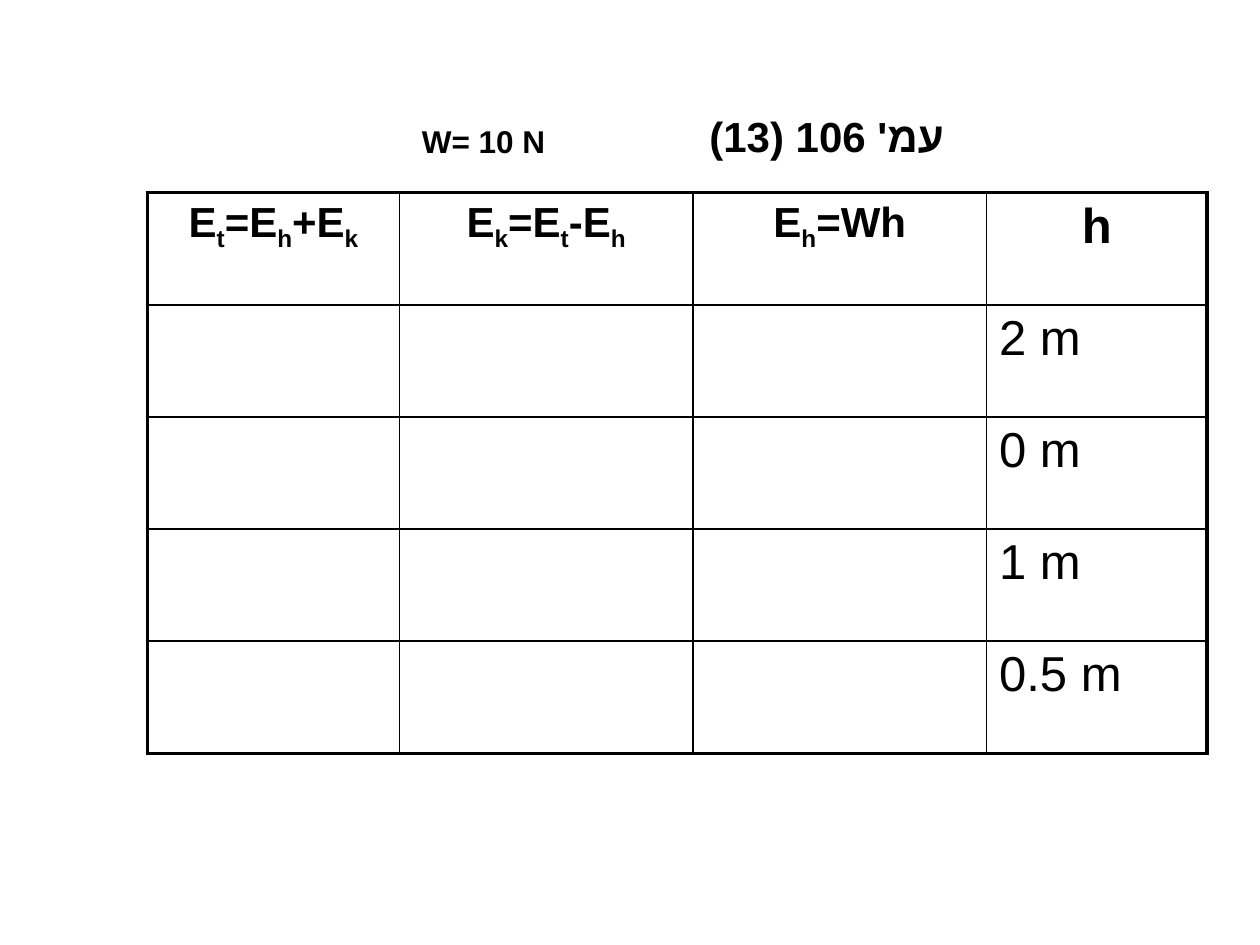
from lxml.etree import SubElement
from pptx import Presentation
from pptx.dml.color import RGBColor
from pptx.enum.text import MSO_AUTO_SIZE, PP_ALIGN
from pptx.oxml.ns import qn
from pptx.util import Inches, Pt

BLACK = RGBColor(0, 0, 0)
FONT = "Arial"
THIN, THICK = 1, 2.25

# Formulas as (text, is_subscript) runs
HEADERS = [
    [("E", False), ("t", True), ("=E", False), ("h", True), ("+E", False), ("k", True)],
    [("E", False), ("k", True), ("=E", False), ("t", True), ("-E", False), ("h", True)],
    [("E", False), ("h", True), ("=Wh", False)],
    [("h", False)],
]
HEADER_SIZES = [24, 24, 24, 28]
HEIGHTS = ["2 m", "0 m", "1 m", "0.5 m"]
COLUMN_WIDTHS = [2, 2.33, 2.33, 1.75]
ROW_HEIGHT = 0.89
TABLE_LEFT, TABLE_TOP = 1.17, 1.53


def add_run(paragraph, text, size, bold=True, subscript=False):
    run = paragraph.add_run()
    run.text = text
    font = run.font
    font.name, font.size, font.bold = FONT, Pt(size), bold
    font.color.rgb = BLACK
    SubElement(font._element, qn("a:cs"), typeface=FONT)
    if subscript:
        font._element.set("baseline", "-25000")


def space_before(paragraph, percent):
    """Set the space before as a percentage of the line."""
    spacing = SubElement(paragraph._p.get_or_add_pPr(), qn("a:spcBef"))
    SubElement(spacing, qn("a:spcPct"), val=str(percent * 1000))


def set_borders(cell, widths):
    """Draw the left, right, top and bottom borders, widths in points."""
    properties = cell._tc.get_or_add_tcPr()
    for tag, width in zip(("a:lnL", "a:lnR", "a:lnT", "a:lnB"), widths):
        line = SubElement(properties, qn(tag), w=str(Pt(width)))
        fill = SubElement(line, qn("a:solidFill"))
        SubElement(fill, qn("a:srgbClr"), val=str(BLACK))


def add_label(slide, text, size, left, top, width, height):
    box = slide.shapes.add_textbox(*map(Inches, (left, top, width, height)))
    frame = box.text_frame
    frame.word_wrap = True
    frame.auto_size = MSO_AUTO_SIZE.SHAPE_TO_FIT_TEXT
    paragraph = frame.paragraphs[0]
    add_run(paragraph, text, size)
    return paragraph


def add_energy_table(slide):
    row_count, column_count = len(HEIGHTS) + 1, len(HEADERS)
    table = slide.shapes.add_table(
        row_count, column_count, Inches(TABLE_LEFT), Inches(TABLE_TOP),
        Inches(sum(COLUMN_WIDTHS)), Inches(ROW_HEIGHT * row_count)).table
    table.first_row = table.horz_banding = False
    for column, width in zip(table.columns, COLUMN_WIDTHS):
        column.width = Inches(width)
    for r, row in enumerate(table.rows):
        row.height = Inches(ROW_HEIGHT)
        for c, cell in enumerate(row.cells):
            on_edge = (c == 0, c == column_count - 1, r == 0, r == row_count - 1)
            set_borders(cell, [THICK if edge else THIN for edge in on_edge])
            cell.fill.background()

    for c, (formula, size) in enumerate(zip(HEADERS, HEADER_SIZES)):
        paragraph = table.cell(0, c).text_frame.paragraphs[0]
        paragraph.alignment = PP_ALIGN.CENTER
        space_before(paragraph, 20)
        for text, subscript in formula:
            add_run(paragraph, text, size, subscript=subscript)
    for r, height in enumerate(HEIGHTS, start=1):
        paragraph = table.cell(r, column_count - 1).text_frame.paragraphs[0]
        space_before(paragraph, 20)
        add_run(paragraph, height, 28, bold=False)


def main():
    presentation = Presentation()
    presentation.slide_width, presentation.slide_height = Inches(10), Inches(7.5)
    slide = presentation.slides.add_slide(presentation.slide_layouts[6])

    add_energy_table(slide)
    page_reference = add_label(slide, "עמ' 106 (13)", 24, 5.42, 0.83, 2.17, 0.5)
    page_reference.alignment = PP_ALIGN.RIGHT
    page_reference._p.get_or_add_pPr().set("rtl", "1")
    space_before(page_reference, 50)
    add_label(slide, "W= 10 N", 18, 3.25, 0.92, 1.35, 0.4)

    presentation.save("out.pptx")


if __name__ == "__main__":
    main()
